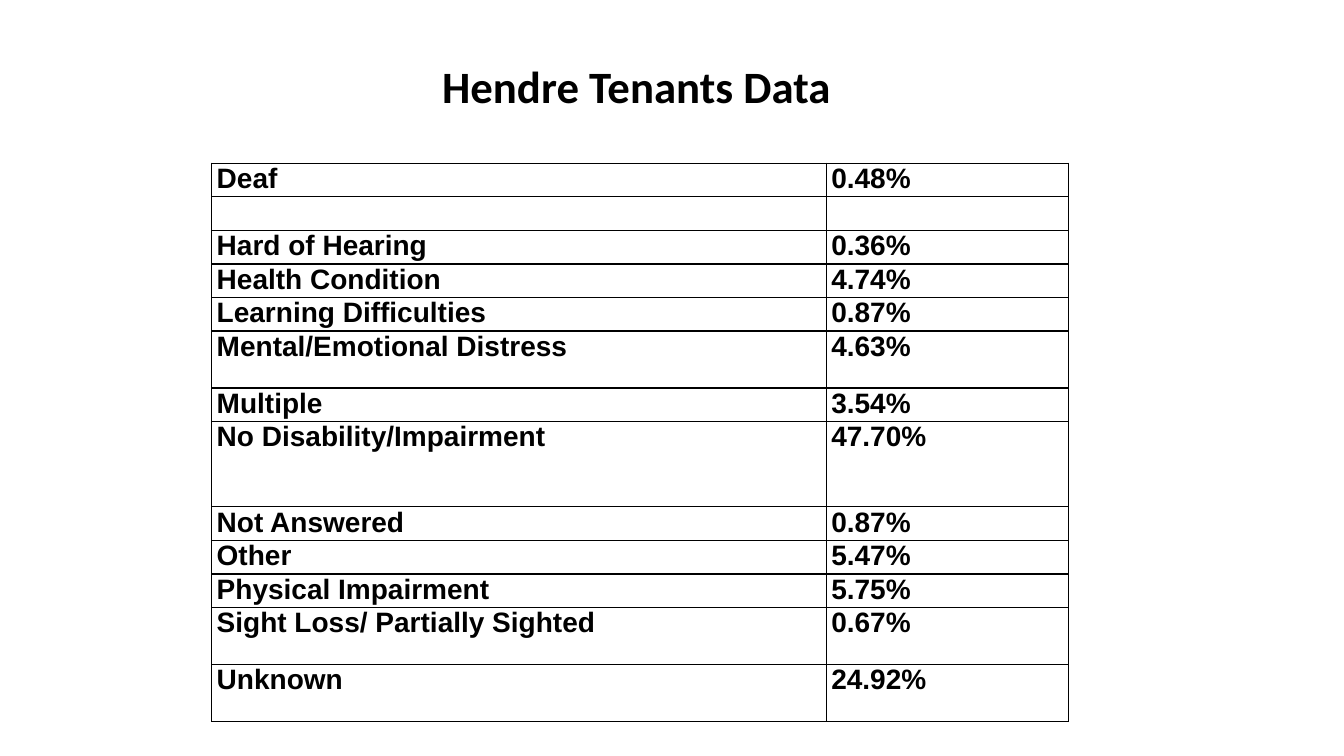
from lxml import etree
from pptx import Presentation
from pptx.dml.color import RGBColor
from pptx.enum.text import MSO_ANCHOR, PP_ALIGN
from pptx.oxml.ns import qn
from pptx.util import Pt

BLACK = RGBColor(0, 0, 0)
CENTER = PP_ALIGN.CENTER
TOP = MSO_ANCHOR.TOP
SINGLE, DOUBLE, TRIPLE = 24, 40.6, 61

ROWS = [
    ("Deaf", "0.48%", SINGLE),
    ("", "", SINGLE),
    ("Hard of Hearing", "0.36%", SINGLE),
    ("Health Condition", "4.74%", SINGLE),
    ("Learning Difficulties", "0.87%", SINGLE),
    ("Mental/Emotional Distress", "4.63%", DOUBLE),
    ("Multiple", "3.54%", SINGLE),
    ("No Disability/Impairment", "47.70%", TRIPLE),
    ("Not Answered", "0.87%", SINGLE),
    ("Other", "5.47%", SINGLE),
    ("Physical Impairment", "5.75%", SINGLE),
    ("Sight Loss/ Partially Sighted", "0.67%", DOUBLE),
    ("Unknown", "24.92%", DOUBLE),
]
COLUMN_WIDTHS = [439, 173.3]


def format_font(paragraph, name, size):
    paragraph.font.name = name
    paragraph.font.size = Pt(size)
    paragraph.font.bold = True
    paragraph.font.color.rgb = BLACK


def add_borders(cell):
    properties = cell._tc.get_or_add_tcPr()
    for position, side in enumerate(("a:lnL", "a:lnR", "a:lnT", "a:lnB")):
        line = etree.Element(qn(side), w=str(Pt(1)))
        fill = etree.SubElement(line, qn("a:solidFill"))
        etree.SubElement(fill, qn("a:srgbClr"), val=str(BLACK))
        properties.insert(position, line)


presentation = Presentation()
presentation.slide_width = Pt(960)
presentation.slide_height = Pt(540)
slide = presentation.slides.add_slide(presentation.slide_layouts[5])

title = slide.shapes.title
title.left, title.top, title.width, title.height = Pt(151.2), Pt(38), Pt(607), Pt(46)
title.text_frame.text = "Hendre Tenants Data"
title_paragraph = title.text_frame.paragraphs[0]
title_paragraph.alignment = CENTER
format_font(title_paragraph, "Calibri", 32)

table_height = sum(height for _, _, height in ROWS)
table = slide.shapes.add_table(
    len(ROWS), len(COLUMN_WIDTHS),
    Pt(151.2), Pt(116.6), Pt(sum(COLUMN_WIDTHS)), Pt(table_height),
).table
table.first_row = False
table.horz_banding = False
for column, width in zip(table.columns, COLUMN_WIDTHS):
    column.width = Pt(width)

for row, (label, share, height) in zip(table.rows, ROWS):
    row.height = Pt(height)
    for cell, text in zip(row.cells, (label, share)):
        cell.text = text
        cell.margin_left = cell.margin_right = Pt(3.6)
        cell.margin_top = cell.margin_bottom = 0
        cell.vertical_anchor = TOP
        cell.fill.background()
        add_borders(cell)
        format_font(cell.text_frame.paragraphs[0], "Arial", 20)

presentation.save("out.pptx")
